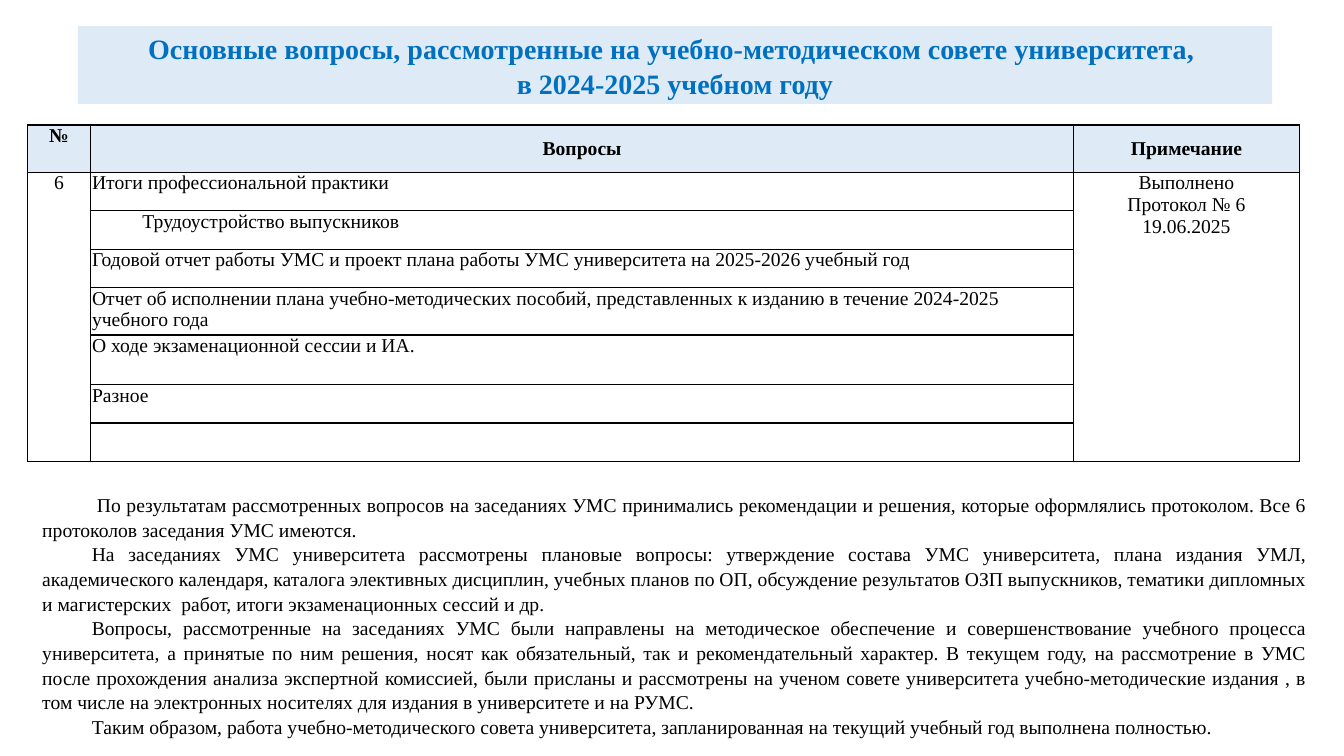
from dataclasses import dataclass

from lxml import etree
from pptx import Presentation
from pptx.dml.color import RGBColor
from pptx.enum.text import MSO_ANCHOR, MSO_AUTO_SIZE, PP_ALIGN
from pptx.oxml.ns import qn
from pptx.util import Cm, Pt

LEFT, CENTER, JUSTIFY = PP_ALIGN.LEFT, PP_ALIGN.CENTER, PP_ALIGN.JUSTIFY
TOP, MIDDLE = MSO_ANCHOR.TOP, MSO_ANCHOR.MIDDLE
NO_AUTOFIT = MSO_AUTO_SIZE.NONE


@dataclass(frozen=True)
class Theme:
    font: str = "Times New Roman"
    title_size: int = 20
    text_size: int = 14
    title_color: str = "0070C0"
    text_color: str = "000000"
    band_color: str = "DEEBF7"
    paper_color: str = "FFFFFF"
    border_color: str = "000000"
    border_width: int = 1


TITLE = [
    "Основные вопросы, рассмотренные на учебно-методическом совете университета, ",
    "в 2024-2025 учебном году",
]
HEADERS = ["№", "Вопросы", "Примечание"]
MEETING_NUMBER = "6"
QUESTIONS = [
    "Итоги профессиональной практики",
    "Трудоустройство выпускников",
    "Годовой отчет работы УМС и проект плана работы УМС университета на 2025-2026 учебный год",
    "Отчет об исполнении плана учебно-методических пособий, представленных к изданию "
    "в течение 2024-2025 учебного года",
    "О ходе экзаменационной сессии и ИА.",
    "Разное",
    "",
]
INDENTED_QUESTION = 1
NOTE = ["Выполнено", "Протокол № 6", "19.06.2025"]
COLUMN_WIDTHS = [1.6, 24.76, 5.7]
ROW_HEIGHTS = [1.19, 0.97, 0.97, 0.97, 1.19, 1.25, 0.97, 0.97]
SUMMARY = [
    "По результатам рассмотренных вопросов на заседаниях УМС принимались рекомендации и решения, "
    "которые оформлялись протоколом. Все 6 протоколов заседания УМС имеются. ",
    "На заседаниях УМС университета рассмотрены плановые вопросы: утверждение состава УМС "
    "университета, плана издания УМЛ, академического календаря, каталога элективных дисциплин, "
    "учебных планов по ОП, обсуждение результатов ОЗП выпускников, тематики дипломных и "
    "магистерских  работ, итоги экзаменационных сессий и др. ",
    "Вопросы, рассмотренные на заседаниях УМС были направлены на методическое обеспечение и "
    "совершенствование учебного процесса университета, а принятые по ним решения, носят как "
    "обязательный, так и рекомендательный характер. В текущем году, на рассмотрение в УМС после "
    "прохождения анализа экспертной комиссией, были присланы и рассмотрены на ученом совете "
    "университета учебно-методические издания , в том числе на электронных носителях для издания "
    "в университете и на РУМС. ",
    "Таким образом, работа учебно-методического совета университета, запланированная на текущий "
    "учебный год выполнена полностью.",
]


def write_text(paragraph, text, *, font, size, color, bold=False, align=LEFT,
               margin=0, indent=0, spacing=1.0):
    paragraph.alignment = align
    paragraph.line_spacing = spacing
    paragraph.space_before = paragraph.space_after = Pt(0)
    properties = paragraph._p.get_or_add_pPr()
    properties.set("marL", str(Cm(margin)))
    properties.set("indent", str(Cm(indent)))
    etree.SubElement(properties, qn("a:buNone"))
    run = paragraph.add_run()
    run.text = text
    run.font.name = font
    run.font.size = Pt(size)
    run.font.bold = bold
    run.font.color.rgb = RGBColor.from_string(color)


class SlideBuilder:
    def __init__(self, slide, theme):
        self.slide = slide
        self.theme = theme

    def write_lines(self, frame, lines, **options):
        style = {"font": self.theme.font, "size": self.theme.text_size,
                 "color": self.theme.text_color, **options}
        for number, line in enumerate(lines):
            paragraph = frame.add_paragraph() if number else frame.paragraphs[0]
            write_text(paragraph, line, **style)

    def place(self, shape, left, top, width, height, anchor):
        shape.left, shape.top = Cm(left), Cm(top)
        shape.width, shape.height = Cm(width), Cm(height)
        frame = shape.text_frame
        frame.word_wrap = True
        frame.auto_size = NO_AUTOFIT
        frame.vertical_anchor = anchor
        return frame

    def title(self, lines, *box):
        shape = self.slide.shapes.title
        shape.fill.solid()
        shape.fill.fore_color.rgb = RGBColor.from_string(self.theme.band_color)
        frame = self.place(shape, *box, MIDDLE)
        self.write_lines(frame, lines, size=self.theme.title_size, bold=True,
                         color=self.theme.title_color, align=CENTER, spacing=1.05)

    def body(self, lines, *box):
        frame = self.place(self.slide.placeholders[1], *box, TOP)
        frame.margin_top = Cm(0.32)
        self.write_lines(frame, lines, align=JUSTIFY, indent=1.25, spacing=1.05)
        frame.paragraphs[0]._p.pPr.set("indent", str(Cm(1.38)))

    def cell(self, cell, lines, *, fill, anchor=TOP, **options):
        cell.fill.solid()
        cell.fill.fore_color.rgb = RGBColor.from_string(fill)
        cell.vertical_anchor = anchor
        cell.margin_left = cell.margin_right = Cm(0.03)
        cell.margin_top = cell.margin_bottom = Cm(0)
        self.write_lines(cell.text_frame, lines, **options)

    def border(self, cell):
        properties = cell._tc.get_or_add_tcPr()
        for position, side in enumerate(("a:lnL", "a:lnR", "a:lnT", "a:lnB")):
            line = etree.Element(qn(side), w=str(Pt(self.theme.border_width)))
            fill = etree.SubElement(line, qn("a:solidFill"))
            etree.SubElement(fill, qn("a:srgbClr"), val=self.theme.border_color)
            properties.insert(position, line)

    def table(self, left, top):
        table = self.slide.shapes.add_table(
            len(ROW_HEIGHTS), len(COLUMN_WIDTHS), Cm(left), Cm(top),
            Cm(sum(COLUMN_WIDTHS)), Cm(sum(ROW_HEIGHTS))).table
        for column, width in zip(table.columns, COLUMN_WIDTHS):
            column.width = Cm(width)
        for row, height in zip(table.rows, ROW_HEIGHTS):
            row.height = Cm(height)
        paper = self.theme.paper_color
        for column, header in enumerate(HEADERS):
            self.cell(table.cell(0, column), [header], fill=self.theme.band_color,
                      anchor=MIDDLE if column else TOP, bold=True, align=CENTER)
        for row, question in enumerate(QUESTIONS):
            margin = 1.27 if row == INDENTED_QUESTION else 0
            self.cell(table.cell(row + 1, 1), [question], fill=paper, margin=margin)
        for column, lines in ((0, [MEETING_NUMBER]), (2, NOTE)):
            table.cell(1, column).merge(table.cell(len(QUESTIONS), column))
            self.cell(table.cell(1, column), lines, fill=paper, align=CENTER)
        for cell in table.iter_cells():
            self.border(cell)


def main():
    presentation = Presentation()
    presentation.slide_width, presentation.slide_height = Cm(33.87), Cm(19.05)
    slide = presentation.slides.add_slide(presentation.slide_layouts[1])
    builder = SlideBuilder(slide, Theme())
    builder.table(0.69, 3.15)
    builder.title(TITLE, 1.96, 0.66, 30.1, 1.96)
    builder.body(SUMMARY, 0.81, 12.07, 32.39, 6.5)
    presentation.save("out.pptx")


if __name__ == "__main__":
    main()
